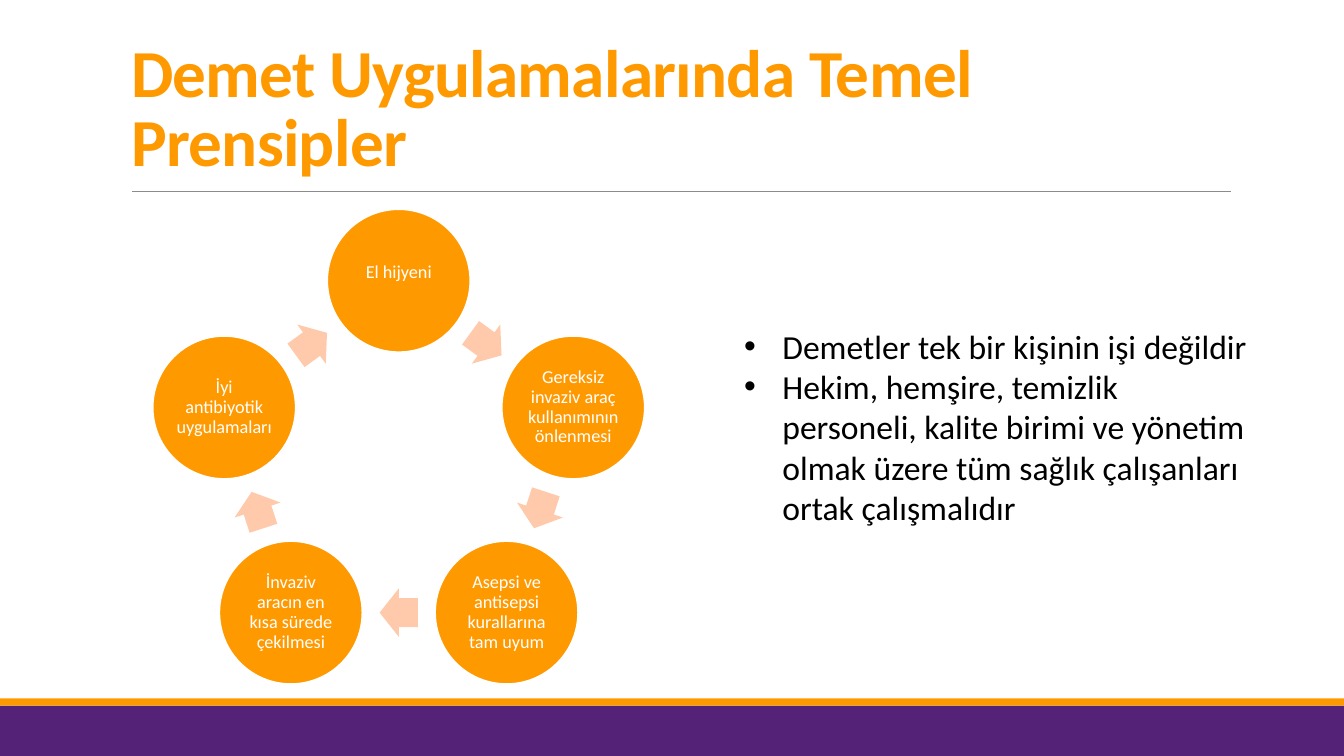
from math import cos, radians, sin

from lxml.etree import SubElement
from pptx import Presentation
from pptx.dml.color import RGBColor
from pptx.enum.shapes import MSO_CONNECTOR, MSO_SHAPE
from pptx.enum.text import MSO_ANCHOR, MSO_AUTO_SIZE, PP_ALIGN
from pptx.oxml.ns import qn
from pptx.util import Inches, Pt

ORANGE = RGBColor(0xFF, 0x99, 0x00)
PURPLE = RGBColor(0x54, 0x23, 0x78)
PEACH = RGBColor(0xFF, 0xCA, 0xAB)
GRAY = RGBColor(0x8C, 0x8C, 0x8C)
WHITE = RGBColor(0xFF, 0xFF, 0xFF)
BLACK = RGBColor(0x00, 0x00, 0x00)

FONT = "Calibri"
SLIDE_WIDTH, SLIDE_HEIGHT = 13.33, 7.5

PRINCIPLES = [
    "El hijyeni",
    "Gereksiz invaziv araç kullanımının önlenmesi",
    "Asepsi ve antisepsi kurallarına tam uyum",
    "İnvaziv aracın en kısa sürede çekilmesi",
    "İyi antibiyotik uygulamaları",
]
TEAM_POINTS = [
    "Demetler tek bir kişinin işi değildir",
    "Hekim, hemşire, temizlik personeli, kalite birimi ve yönetim olmak üzere "
    "tüm sağlık çalışanları ortak çalışmalıdır",
]


def place(shape, left, top, width, height):
    shape.left, shape.top = Inches(left), Inches(top)
    shape.width, shape.height = Inches(width), Inches(height)


def add_bullet(paragraph, indent):
    properties = paragraph._p.get_or_add_pPr()
    properties.set("marL", str(Inches(indent)))
    properties.set("indent", str(-Inches(indent)))
    SubElement(properties, qn("a:buFont"), typeface="Arial")
    SubElement(properties, qn("a:buChar"), char="•")


def write_text(shape, lines, size, color, bold=False, align=PP_ALIGN.LEFT,
               anchor=MSO_ANCHOR.TOP, spacing=1.0, margins=(0.1, 0.05, 0.1, 0.05),
               bullet_indent=None, tracking=None):
    frame = shape.text_frame
    frame.word_wrap = True
    frame.auto_size = MSO_AUTO_SIZE.NONE
    frame.vertical_anchor = anchor
    (frame.margin_left, frame.margin_top,
     frame.margin_right, frame.margin_bottom) = map(Inches, margins)
    for index, line in enumerate(lines):
        paragraph = frame.add_paragraph() if index else frame.paragraphs[0]
        paragraph.alignment = align
        paragraph.line_spacing = spacing
        paragraph.space_before = paragraph.space_after = Pt(0)
        if bullet_indent:
            add_bullet(paragraph, bullet_indent)
        run = paragraph.add_run()
        run.text = line
        run.font.name, run.font.size, run.font.bold = FONT, Pt(size), bold
        run.font.color.rgb = color
        if tracking is not None:
            run._r.get_or_add_rPr().set("spc", str(int(tracking * 100)))


def add_filled(slide, preset, left, top, width, height, fill, outline=None):
    shape = slide.shapes.add_shape(
        preset, Inches(left), Inches(top), Inches(width), Inches(height))
    shape.shadow.inherit = False
    shape.fill.solid()
    shape.fill.fore_color.rgb = fill
    if outline is None:
        shape.line.fill.background()
    else:
        shape.line.color.rgb = outline
        shape.line.width = Pt(2)
    return shape


def build_footer(slide, top, height, stripe=0.07):
    add_filled(slide, MSO_SHAPE.RECTANGLE, 0, top + stripe,
               SLIDE_WIDTH, height - stripe, PURPLE)
    add_filled(slide, MSO_SHAPE.RECTANGLE, 0, top, SLIDE_WIDTH, stripe, ORANGE)


def build_title(slide, left, top, width, height):
    title = slide.shapes.title
    place(title, left, top, width, height)
    write_text(title, ["Demet Uygulamalarında Temel Prensipler"], 48, ORANGE,
               bold=True, anchor=MSO_ANCHOR.MIDDLE, spacing=0.85, tracking=-0.5)
    # Rule under the title
    rule_left, rule_top = Inches(left + 0.11), Inches(top + height)
    rule = slide.shapes.add_connector(
        MSO_CONNECTOR.STRAIGHT, rule_left, rule_top,
        rule_left + Inches(10.9), rule_top)
    rule.line.color.rgb = GRAY
    rule.line.width = Pt(0.75)
    SubElement(rule._element.spPr, qn("a:effectLst"))


def build_cycle(slide, left, top, width, diameter=1.43, radius=1.82):
    center_x, center_y = left + width / 2, top + diameter / 2 + radius
    step = 360 / len(PRINCIPLES)
    arrow_radius = radius * cos(radians(step / 2))
    arrow_width, arrow_height = 0.38, 0.48

    def box_at(angle, distance, box_width, box_height):
        x = center_x + distance * sin(radians(angle))
        y = center_y - distance * cos(radians(angle))
        return x - box_width / 2, y - box_height / 2, box_width, box_height

    for index, principle in enumerate(PRINCIPLES):
        angle = index * step
        circle = add_filled(slide, MSO_SHAPE.OVAL,
                            *box_at(angle, radius, diameter, diameter),
                            ORANGE, outline=WHITE)
        # The label of the top circle sits a little above its middle
        bottom = 0.19 if index == 0 else 0.02
        write_text(circle, [principle], 13, WHITE, align=PP_ALIGN.CENTER,
                   anchor=MSO_ANCHOR.MIDDLE, spacing=0.9,
                   margins=(0.02, 0.02, 0.02, bottom))
        # Arrow halfway to the next circle
        arrow_angle = angle + step / 2
        arrow = add_filled(slide, MSO_SHAPE.RIGHT_ARROW,
                           *box_at(arrow_angle, arrow_radius, arrow_width, arrow_height),
                           PEACH)
        arrow.adjustments[0], arrow.adjustments[1] = 0.6, 0.5
        arrow.rotation = arrow_angle


def build_team_points(slide, left, top, width, height):
    body = slide.placeholders[1]
    place(body, left, top, width, height)
    write_text(body, TEAM_POINTS, 24, BLACK, bullet_indent=0.38)


def main():
    presentation = Presentation()
    presentation.slide_width = Inches(SLIDE_WIDTH)
    presentation.slide_height = Inches(SLIDE_HEIGHT)
    slide = presentation.slides.add_slide(presentation.slide_layouts[1])
    build_footer(slide, 6.93, 0.57)
    build_title(slide, 1.2, 0.31, 11, 1.59)
    build_cycle(slide, 1.51, 2.07, 4.89)
    build_team_points(slide, 7.28, 3.18, 5.22, 2.12)
    presentation.save("out.pptx")


if __name__ == "__main__":
    main()
